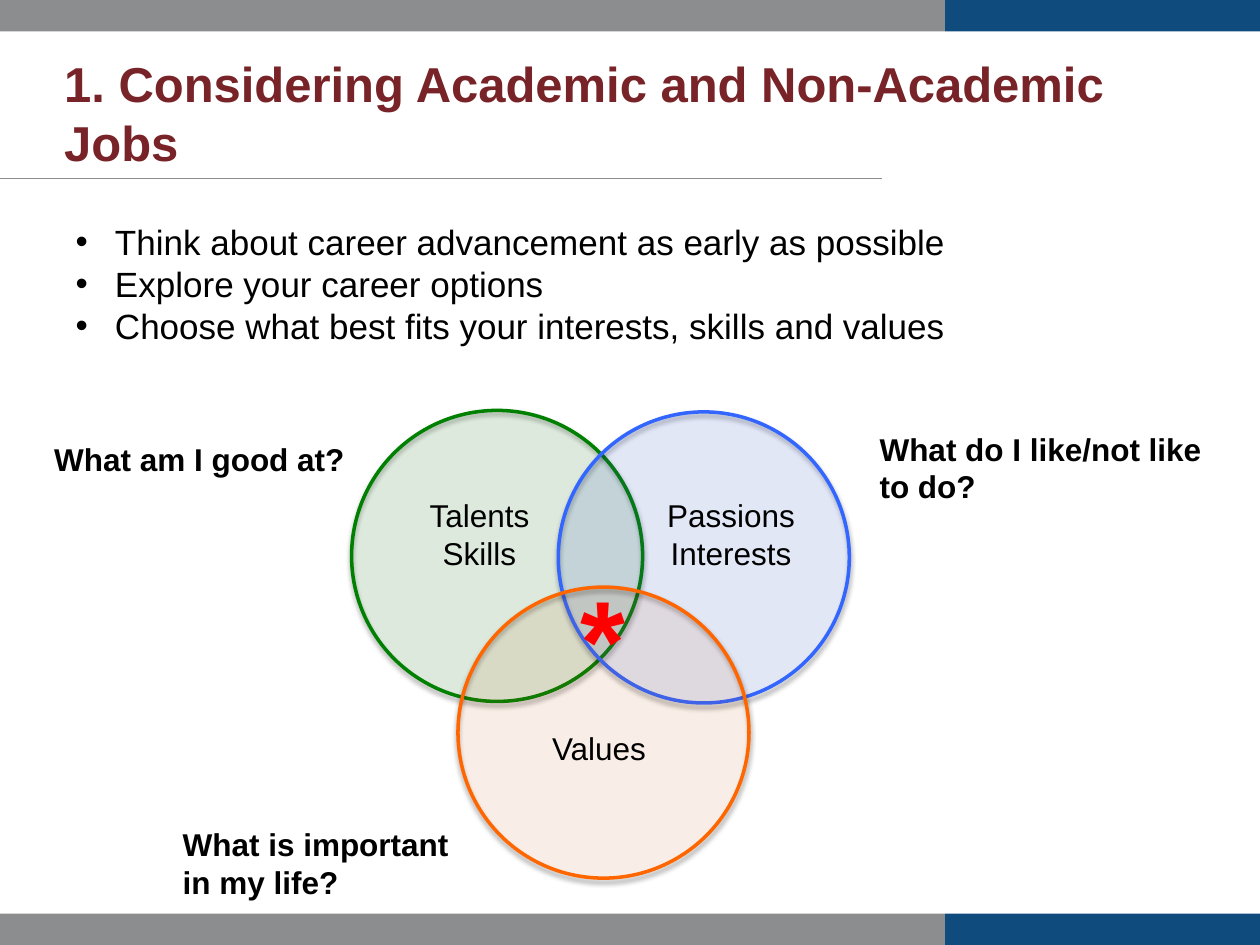
"""Build the slide on academic and non-academic jobs with its three-circle diagram."""
from lxml.etree import SubElement
from pptx import Presentation
from pptx.dml.color import RGBColor
from pptx.enum.shapes import MSO_CONNECTOR, MSO_SHAPE
from pptx.enum.text import MSO_ANCHOR, MSO_AUTO_SIZE, PP_ALIGN
from pptx.oxml import parse_xml
from pptx.oxml.ns import nsdecls, qn
from pptx.util import Pt

WIDTH, HEIGHT, BAR, SPLIT = 720, 540, 18, 540
GREY, NAVY, MAROON, BLACK, RED = "8C8D8E", "104B7D", "782327", "000000", "FF0000"
DIAMETER = 166.3
INSET = 3.6

TITLE = "1. Considering Academic and Non-Academic Jobs"
ADVICE = [
    "Think about career advancement as early as possible",
    "Explore your career options",
    "Choose what best fits your interests, skills and values",
]
CIRCLES = [
    (200.9, 234.5, "008000", 10),
    (319, 235.4, "3366FF", 10),
    (261.7, 335.5, "FF6600", 7),
]
LABELS = [
    (240.5, 280, 67, ["Talents", "Skills"]),
    (377, 280, 81.4, ["Passions", "Interests"]),
    (310.3, 413.3, 64, ["Values"]),
]
QUESTIONS = [
    (27.4, 247.7, 175, ["What am I good at?"]),
    (499, 242, 193, ["What do I like/not like", "to do?"]),
    (100.8, 468, 160.6, ["What is important", "in my life?"]),
]
LABEL_FONT = {"size": Pt(18), "bold": False}
QUESTION_FONT = {"size": Pt(18), "bold": True}
STAR_FONT = {"size": Pt(66), "bold": True}


def rgb(color):
    return RGBColor.from_string(color)


def assign(target, values):
    for key, value in values.items():
        setattr(target, key, value)


def place(shape, left, top, width, height):
    assign(shape, {"left": Pt(left), "top": Pt(top), "width": Pt(width), "height": Pt(height)})


def set_frame(frame, inset, **values):
    sides = ("margin_left", "margin_top", "margin_right", "margin_bottom")
    assign(frame, dict.fromkeys(sides, Pt(inset)) | values)


def write(frame, lines, font, color=BLACK, align=PP_ALIGN.LEFT, bullet=False):
    frame.text = "\n".join(lines)
    for paragraph in frame.paragraphs:
        assign(paragraph, {"alignment": align, "space_before": Pt(0)})
        if bullet:
            properties = paragraph._p.get_or_add_pPr()
            properties.set("marL", str(Pt(22.5)))
            properties.set("indent", str(-Pt(22.5)))
            SubElement(properties, qn("a:buChar"), char="•")
        for run in paragraph.runs:
            assign(run.font, {"name": "Arial"} | font)
            run.font.color.rgb = rgb(color)


def add_label(slide, left, top, width, lines, font, align, color=BLACK, inset=INSET):
    height = len(lines) * font["size"].pt * 1.2 + 2 * INSET
    label = slide.shapes.add_textbox(Pt(left), Pt(top), Pt(width), Pt(height))
    set_frame(label.text_frame, inset, margin_top=Pt(INSET), margin_bottom=Pt(INSET),
              word_wrap=False, auto_size=MSO_AUTO_SIZE.SHAPE_TO_FIT_TEXT)
    write(label.text_frame, lines, font, color, align)
    return label


def add_filled(slide, kind, left, top, width, height, color):
    shape = slide.shapes.add_shape(kind, Pt(left), Pt(top), Pt(width), Pt(height))
    shape.shadow.inherit = False
    shape.fill.solid()
    shape.fill.fore_color.rgb = rgb(color)
    shape.line.fill.background()
    return shape


def add_circle(slide, left, top, color, opacity):
    circle = add_filled(slide, MSO_SHAPE.OVAL, left, top, DIAMETER, DIAMETER, color)
    circle.line.color.rgb = rgb(color)
    circle.line.width = Pt(2)
    properties = circle._element.spPr
    fill_color = properties.find(qn("a:solidFill")).find(qn("a:srgbClr"))
    SubElement(fill_color, qn("a:alpha"), val=str(opacity * 1000))
    properties.find(qn("a:effectLst")).append(parse_xml(
        f'<a:outerShdw {nsdecls("a")} blurRad="{Pt(3)}" dist="{Pt(1.8)}" dir="5400000" '
        f'rotWithShape="0"><a:srgbClr val="{BLACK}"><a:alpha val="35000"/></a:srgbClr>'
        '</a:outerShdw>'))


def add_rule(slide):
    rule = slide.shapes.add_connector(MSO_CONNECTOR.STRAIGHT, Pt(0), Pt(102.2), Pt(504), Pt(102.2))
    rule.line.color.rgb = rgb(GREY)
    rule.line.width = Pt(0.75)
    SubElement(rule._element.spPr, qn("a:effectLst"))


def add_star(slide):
    star = add_label(slide, 324.7, 320.4, 40.3, ["*"], STAR_FONT, PP_ALIGN.CENTER, RED, 7.2)
    run = star.text_frame.paragraphs[0].runs[0]
    run.font._element.insert(0, parse_xml(
        f'<a:ln {nsdecls("a")} w="{Pt(1.5)}"><a:solidFill><a:srgbClr val="FEFEFE"/>'
        '</a:solidFill></a:ln>'))


def main():
    deck = Presentation()
    assign(deck, {"slide_width": Pt(WIDTH), "slide_height": Pt(HEIGHT)})
    slide = deck.slides.add_slide(deck.slide_layouts[1])

    add_rule(slide)
    for top in (0, HEIGHT - BAR):
        for left, right, color in ((SPLIT, WIDTH, NAVY), (0, SPLIT, GREY)):
            add_filled(slide, MSO_SHAPE.RECTANGLE, left, top, right - left, BAR, color)

    title, advice = slide.placeholders
    place(title, 36.7, 46.1, 666.7, 36.7)
    set_frame(title.text_frame, 0, word_wrap=True, auto_size=MSO_AUTO_SIZE.NONE,
              vertical_anchor=MSO_ANCHOR.MIDDLE)
    write(title.text_frame, [TITLE], {"size": Pt(28), "bold": True}, MAROON)

    place(advice, 39.6, 122.4, 634.3, 79.9)
    set_frame(advice.text_frame, INSET, word_wrap=True, vertical_anchor=MSO_ANCHOR.TOP,
              auto_size=MSO_AUTO_SIZE.SHAPE_TO_FIT_TEXT)
    write(advice.text_frame, ADVICE, {"size": Pt(20)}, bullet=True)

    for circle in CIRCLES:
        add_circle(slide, *circle)
    for label in LABELS:
        add_label(slide, *label, LABEL_FONT, PP_ALIGN.CENTER)
    add_star(slide)
    for question in QUESTIONS:
        add_label(slide, *question, QUESTION_FONT, PP_ALIGN.LEFT)

    deck.save("out.pptx")


if __name__ == "__main__":
    main()
